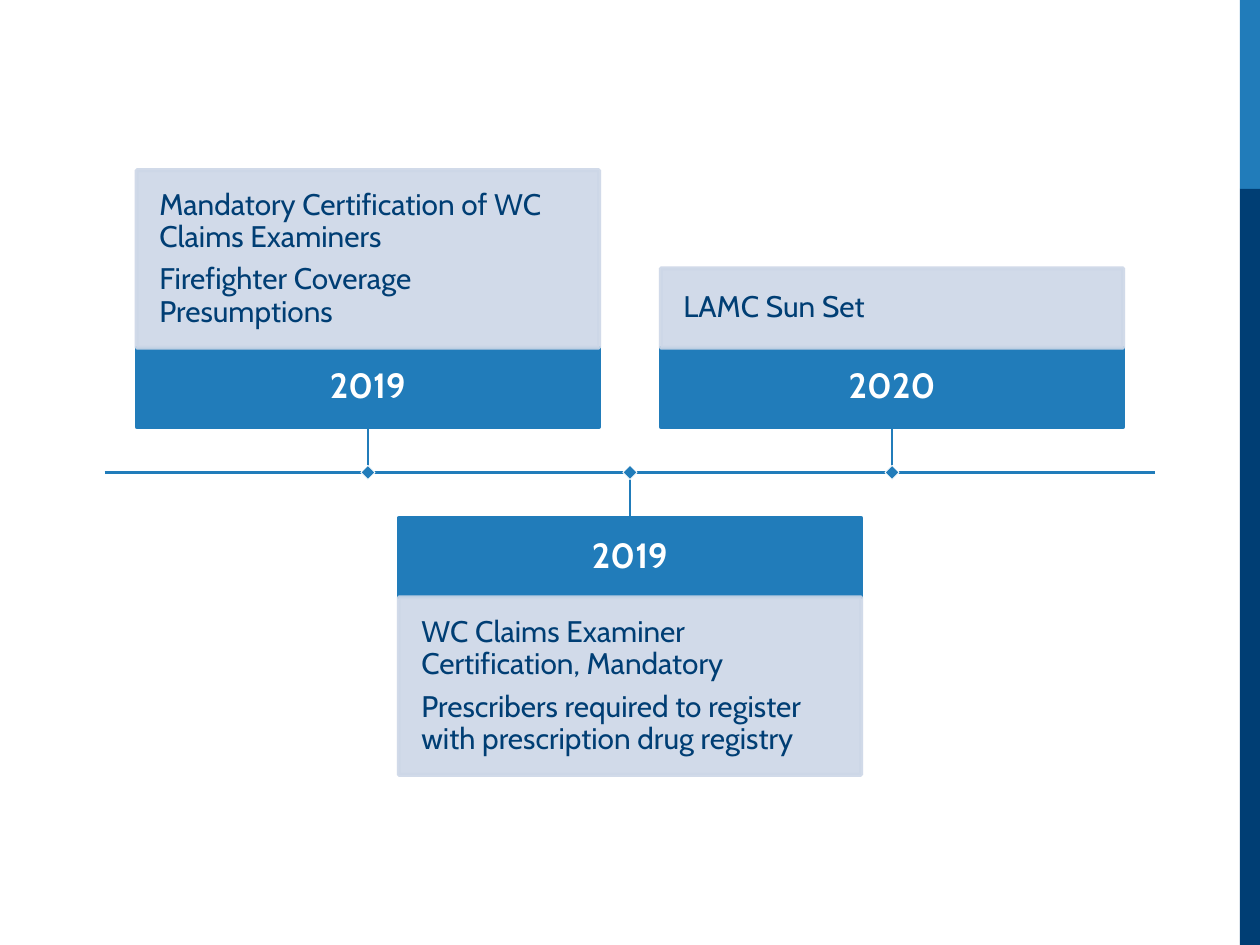
"""Build a timeline slide of workers' compensation milestones."""
import pptx
import pptx.dml.color
import pptx.enum.shapes
import pptx.enum.text
import pptx.oxml
import pptx.oxml.ns
import pptx.util
from pptx.util import Inches

COLORS = {"blue": "217CBA", "navy": "003E74", "pale": "CDD7E7", "white": "FFFFFF"}
FONT = "Cabin"
AXIS_Y = 3.75
CENTER_X = 5
STEP = 2.08
CARD_WIDTH = 3.67
YEAR_HEIGHT = 0.63
STEM = 0.36
MARKER = 0.08
MILESTONES = [
    ("2019", ["Mandatory Certification of WC Claims Examiners",
              "Firefighter Coverage Presumptions"], 1.41, True),
    ("2019", ["WC Claims Examiner Certification, Mandatory",
              "Prescribers required to register with prescription drug registry"], 1.41, False),
    ("2020", ["LAMC Sun Set"], 0.63, True),
]


def rgb(name):
    return pptx.dml.color.RGBColor.from_string(COLORS[name])


def add_box(slide, left, top, width, height, fill, line=None, line_width=2.25):
    shape = slide.shapes.add_shape(
        pptx.enum.shapes.MSO_SHAPE.RECTANGLE,
        Inches(left), Inches(top), Inches(width), Inches(height))
    shape.shadow.inherit = False
    shape.fill.solid()
    shape.fill.fore_color.rgb = rgb(fill)
    if line:
        shape.line.color.rgb = rgb(line)
        shape.line.width = pptx.util.Pt(line_width)
    else:
        shape.line.fill.background()
    return shape


def set_opacity(shape, percent):
    tag = pptx.oxml.ns.qn("a:srgbClr")
    for color in shape.element.spPr.iter(tag):
        alpha = color.makeelement(pptx.oxml.ns.qn("a:alpha"), {"val": str(percent * 1000)})
        color.append(alpha)


def add_line(slide, start, end, width):
    line = slide.shapes.add_connector(
        pptx.enum.shapes.MSO_CONNECTOR.STRAIGHT,
        *(Inches(value) for value in (*start, *end)))
    line.line.color.rgb = rgb("blue")
    line.line.width = pptx.util.Pt(width)
    properties = line.element.spPr
    properties.append(properties.makeelement(pptx.oxml.ns.qn("a:effectLst"), {}))
    return line


def write_text(shape, texts, size, color, margin, alignment, space_after, bold=False):
    frame = shape.text_frame
    frame.word_wrap = True
    frame.vertical_anchor = pptx.enum.text.MSO_ANCHOR.MIDDLE
    frame.margin_left = frame.margin_right = Inches(margin)
    frame.margin_top = frame.margin_bottom = Inches(margin)
    for index, text in enumerate(texts):
        paragraph = frame.add_paragraph() if index else frame.paragraphs[0]
        paragraph.alignment = alignment
        paragraph.line_spacing = 0.9
        paragraph.space_after = pptx.util.Pt(space_after)
        run = paragraph.add_run()
        run.text = text
        run.font.name = FONT
        run.font.size = pptx.util.Pt(size)
        run.font.bold = bold
        run.font.color.rgb = rgb(color)


def add_milestone(slide, center, year, details, detail_height, above):
    left = center - CARD_WIDTH / 2
    if above:
        year_top = AXIS_Y - STEM - YEAR_HEIGHT
        detail_top = year_top - detail_height
        joint_y, site = AXIS_Y - STEM, 2
    else:
        year_top = AXIS_Y + STEM
        detail_top = year_top + YEAR_HEIGHT
        joint_y, site = year_top, 0

    year_box = add_box(slide, left, year_top, CARD_WIDTH, YEAR_HEIGHT, "blue", "blue")
    write_text(year_box, [year], 20, "white", 0.11,
               pptx.enum.text.PP_ALIGN.CENTER, 7, bold=True)

    detail_box = add_box(slide, left, detail_top, CARD_WIDTH, detail_height, "pale", "pale")
    set_opacity(detail_box, 90)
    write_text(detail_box, details, 17, "navy", 0.18, pptx.enum.text.PP_ALIGN.LEFT, 6)

    stem = add_line(slide, (center, joint_y), (center, AXIS_Y), 1)
    stem.begin_connect(year_box, site)

    marker = add_box(slide, center - MARKER / 2, AXIS_Y - MARKER / 2,
                     MARKER, MARKER, "blue", "white", 0.5)
    marker.rotation = 45


def main():
    presentation = pptx.Presentation()
    presentation.slide_width = Inches(10)
    presentation.slide_height = Inches(7.5)
    slide = presentation.slides.add_slide(presentation.slide_layouts[6])

    add_box(slide, 9.84, 0, 0.16, 1.5, "blue")
    add_box(slide, 9.84, 1.5, 0.16, 6, "navy")
    add_line(slide, (0.83, AXIS_Y), (9.17, AXIS_Y), 2.25)
    for index, milestone in enumerate(MILESTONES):
        add_milestone(slide, CENTER_X + (index - 1) * STEP, *milestone)

    presentation.save("out.pptx")


if __name__ == "__main__":
    main()
